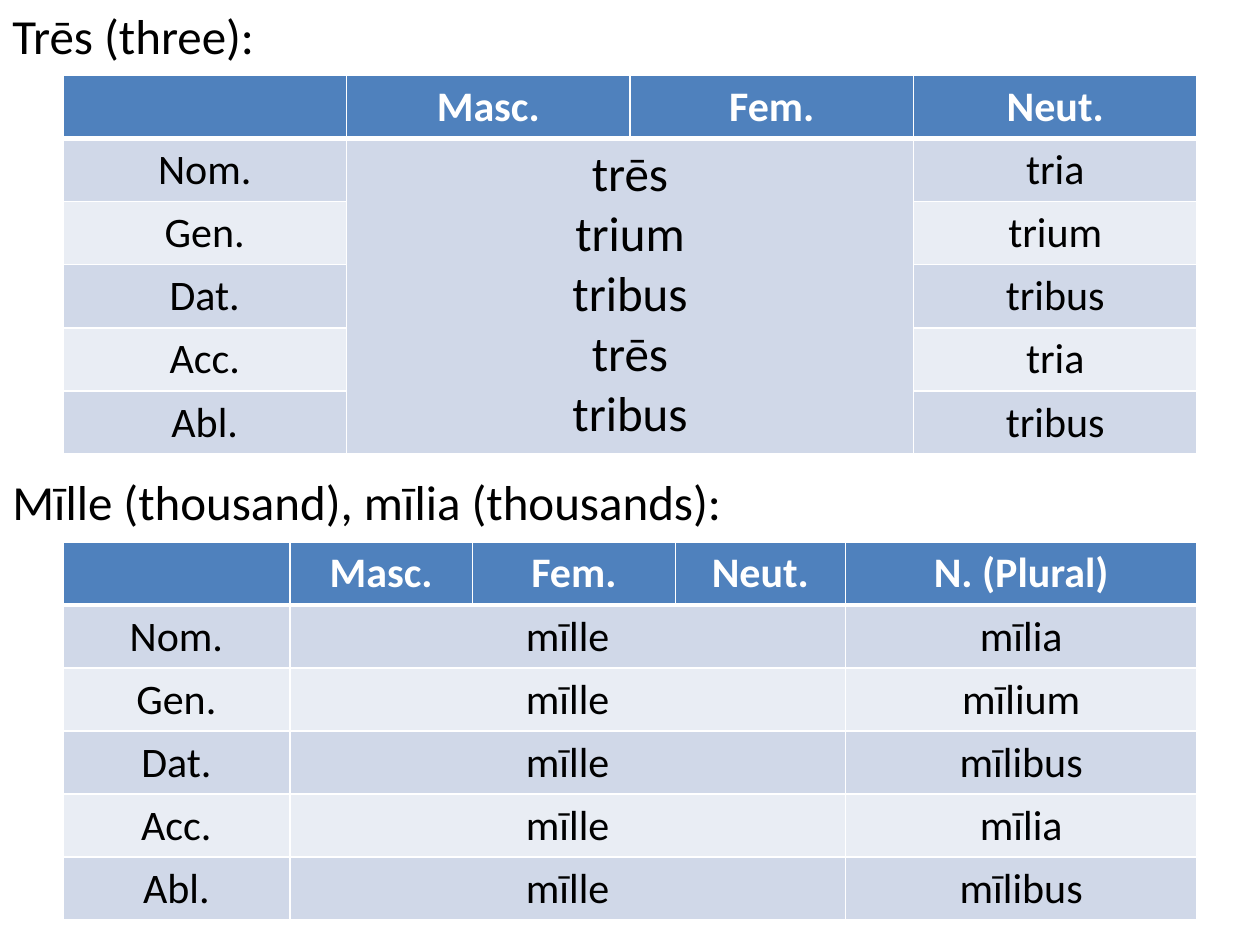
import pptx
import pptx.util
import pptx.dml.color
import pptx.enum.text
import pptx.oxml
import pptx.oxml.ns

Inches = pptx.util.Inches
Pt = pptx.util.Pt
RGBColor = pptx.dml.color.RGBColor
ALIGN = pptx.enum.text.PP_ALIGN
ANCHOR = pptx.enum.text.MSO_ANCHOR

BLACK = RGBColor(0x00, 0x00, 0x00)
WHITE = RGBColor(0xFF, 0xFF, 0xFF)
BLUE = RGBColor(0x4F, 0x81, 0xBD)
DARK = RGBColor(0xD0, 0xD8, 0xE8)
LIGHT = RGBColor(0xE9, 0xED, 0xF4)

CASES = ["Nom.", "Gen.", "Dat.", "Acc.", "Abl."]


def write(frame, text, size=24, color=BLACK, bold=False, align=ALIGN.LEFT, font="Calibri"):
    """Fill a text frame, one paragraph for each line of text."""
    for i, line in enumerate(text.split("\n")):
        para = frame.paragraphs[0] if i == 0 else frame.add_paragraph()
        para.alignment = align
        para.font.size = Pt(size)
        run = para.add_run()
        run.text = line
        run.font.name = font
        run.font.size = Pt(size)
        run.font.bold = bold
        run.font.color.rgb = color


def edge(cell, side, width):
    """Add one border line to a cell."""
    cell._tc.get_or_add_tcPr().append(pptx.oxml.parse_xml(
        f'<a:ln{side} {pptx.oxml.ns.nsdecls("a")} w="{Pt(width)}">'
        f'<a:solidFill><a:srgbClr val="{WHITE}"/></a:solidFill></a:ln{side}>'))


class Sheet:
    """The current slide and the style of its parts."""
    head, bands = BLUE, (DARK, LIGHT)
    row = 0.5

    def __init__(self, deck):
        self.slide = deck.slides.add_slide(deck.slide_layouts[6])

    def label(self, text, left, top, width, height, anchor=ANCHOR.TOP):
        box = self.slide.shapes.add_textbox(
            Inches(left), Inches(top), Inches(width), Inches(height))
        box.text_frame.word_wrap = True
        box.text_frame.vertical_anchor = anchor
        write(box.text_frame, text, size=28)

    def table(self, rows, cols, left, top, merges, size=24):
        """Draw rows of text; merges lists (row, column, last row, last column)."""
        grid = self.slide.shapes.add_table(
            len(rows), len(cols), Inches(left), Inches(top),
            Inches(sum(cols)), Inches(self.row * len(rows))).table
        for col, width in zip(grid.columns, cols):
            col.width = Inches(width)
        for r, line in enumerate(rows):
            for c, text in enumerate(line):
                self.cell(grid.cell(r, c), r, text, size)
        for r, c, last, end in merges:
            grid.cell(r, c).merge(grid.cell(last, end))

    def cell(self, cell, r, text, size):
        top = r == 0
        for side, width in (("L", 1), ("R", 1), ("T", 3 if r == 1 else 1),
                            ("B", 3 if top else 1)):
            edge(cell, side, width)
        cell.fill.solid()
        cell.fill.fore_color.rgb = self.head if top else self.bands[(r - 1) % 2]
        # A stacked cell is set larger than a single line
        write(cell.text_frame, text, size=28 if "\n" in text else size,
              color=WHITE if top else BLACK, bold=top, align=ALIGN.CENTER)


def main():
    deck = pptx.Presentation()
    deck.slide_width, deck.slide_height = Inches(10), Inches(7.5)
    sheet = Sheet(deck)

    # Three
    sheet.label("Trēs (three):", 0, -0.35, 9, 1.25, anchor=ANCHOR.MIDDLE)
    forms = ["trēs\ntrium\ntribus\ntrēs\ntribus", "", "", "", ""]
    neuter = ["tria", "trium", "tribus", "tria", "tribus"]
    rows = [["", "Masc.", "Fem.", "Neut."]]
    rows += [[case, form, "", neut] for case, form, neut in zip(CASES, forms, neuter)]
    sheet.table(rows, [2.25] * 4, 0.5, 0.6, [(1, 1, 5, 2)])

    # Thousand
    sheet.label("Mīlle (thousand), mīlia (thousands):", 0, 3.69, 7.5, 0.57)
    plural = ["mīlia", "mīlium", "mīlibus", "mīlia", "mīlibus"]
    rows = [["", "Masc.", "Fem.", "Neut.", "N. (Plural)"]]
    rows += [[case, "mīlle", "", "", many] for case, many in zip(CASES, plural)]
    sheet.table(rows, [1.8, 1.45, 1.61, 1.35, 2.79], 0.5, 4.3,
                [(r, 1, r, 3) for r in range(1, 6)])

    deck.save("out.pptx")


if __name__ == "__main__":
    main()
